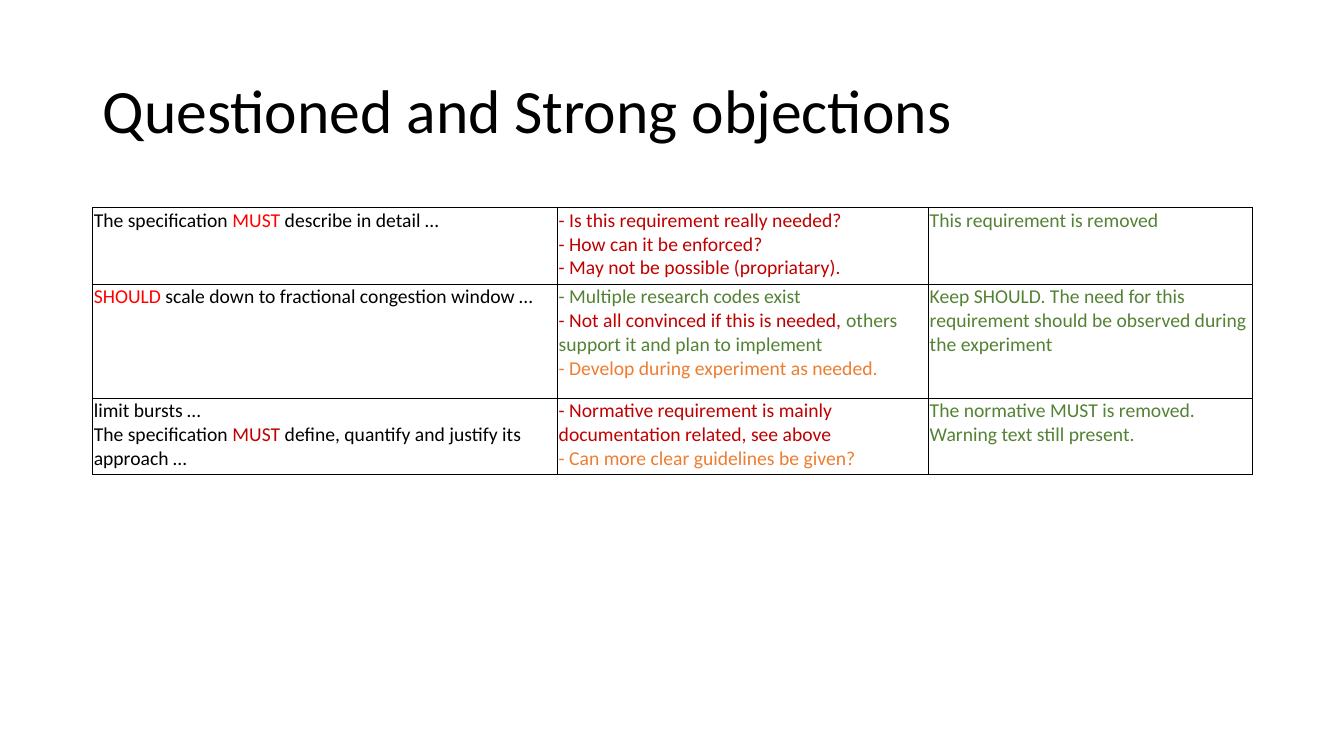
from dataclasses import dataclass

from lxml.etree import SubElement
from pptx import Presentation
from pptx.dml.color import RGBColor
from pptx.enum.text import MSO_ANCHOR
from pptx.oxml.ns import qn
from pptx.util import Inches, Pt


@dataclass(frozen=True)
class Theme:
    font: str = "Calibri"
    title_size: int = 44
    table_size: int = 14
    border_width: int = 1
    black: str = "000000"
    keyword: str = "FF0000"
    objection: str = "C00000"
    resolved: str = "548235"
    open_point: str = "ED7D31"


THEME = Theme()
SLIDE_WIDTH, SLIDE_HEIGHT = Inches(13.33), Inches(7.5)
LEFT, CONTENT_WIDTH = Inches(0.92), Inches(11.5)
TITLE_TOP, TITLE_HEIGHT = 0.4 / 7.5, 1.45 / 7.5
TABLE_TOP = 2.06 / 7.5
COLUMN_SHARES = (0.401, 0.32, 0.279)
ROW_HEIGHTS = (0.76, 1.13, 0.76)

# Each cell is a list of paragraphs; each paragraph is a list of (text, colour) runs.
REQUIREMENTS = [
    [
        [[("The specification ", THEME.black), ("MUST", THEME.keyword),
          (" describe in detail …", THEME.black)]],
        [[("- Is this requirement really needed?", THEME.objection)],
         [("- How can it be enforced?", THEME.objection)],
         [("- May not be possible (propriatary).", THEME.objection)]],
        [[("This requirement is removed", THEME.resolved)]],
    ],
    [
        [[("SHOULD", THEME.keyword),
          (" scale down to fractional congestion window …", THEME.black)]],
        [[("- Multiple research codes exist", THEME.resolved)],
         [("- Not all convinced if this is needed, ", THEME.objection),
          ("others support it and plan to implement", THEME.resolved)],
         [("- Develop during experiment as needed.", THEME.open_point)]],
        [[("Keep SHOULD. The need for this requirement should be observed "
           "during the experiment", THEME.resolved)]],
    ],
    [
        [[("limit bursts …", THEME.black)],
         [("The specification ", THEME.black), ("MUST", THEME.objection),
          (" define, quantify and justify its approach …", THEME.black)]],
        [[("- Normative requirement is mainly documentation related, see above",
           THEME.objection)],
         [("- Can more clear guidelines be given?", THEME.open_point)]],
        [[("The normative MUST is removed. Warning text still present.",
           THEME.resolved)]],
    ],
]


def add_run(paragraph, text, size, color):
    run = paragraph.add_run()
    run.text = text
    run.font.name = THEME.font
    run.font.size = Pt(size)
    run.font.color.rgb = RGBColor.from_string(color)


def add_title(slide, text):
    shape = slide.shapes.add_textbox(
        LEFT, int(SLIDE_HEIGHT * TITLE_TOP),
        CONTENT_WIDTH, int(SLIDE_HEIGHT * TITLE_HEIGHT))
    frame = shape.text_frame
    frame.word_wrap = True
    frame.vertical_anchor = MSO_ANCHOR.MIDDLE
    paragraph = frame.paragraphs[0]
    paragraph.line_spacing = 0.9
    add_run(paragraph, text, THEME.title_size, THEME.black)


def set_borders(cell):
    properties = cell._tc.get_or_add_tcPr()
    for position, side in enumerate(("a:lnL", "a:lnR", "a:lnT", "a:lnB")):
        line = SubElement(properties, qn(side), w=str(Pt(THEME.border_width)))
        fill = SubElement(line, qn("a:solidFill"))
        SubElement(fill, qn("a:srgbClr"), val=THEME.black)
        properties.insert(position, line)


def fill_cell(cell, paragraphs):
    cell.fill.background()
    set_borders(cell)
    cell.margin_left = cell.margin_right = cell.margin_top = Inches(0.01)
    cell.margin_bottom = 0
    frame = cell.text_frame
    for index, runs in enumerate(paragraphs):
        paragraph = frame.add_paragraph() if index else frame.paragraphs[0]
        for text, color in runs:
            add_run(paragraph, text, THEME.table_size, color)


def add_requirements_table(slide, rows):
    table = slide.shapes.add_table(
        len(rows), len(COLUMN_SHARES), LEFT, int(SLIDE_HEIGHT * TABLE_TOP),
        CONTENT_WIDTH, Inches(sum(ROW_HEIGHTS))).table
    table.first_row = table.horz_banding = False
    for column, share in zip(table.columns, COLUMN_SHARES):
        column.width = int(CONTENT_WIDTH * share)
    for table_row, height, cells in zip(table.rows, ROW_HEIGHTS, rows):
        table_row.height = Inches(height)
        for cell, paragraphs in zip(table_row.cells, cells):
            fill_cell(cell, paragraphs)


def main():
    presentation = Presentation()
    presentation.slide_width = SLIDE_WIDTH
    presentation.slide_height = SLIDE_HEIGHT
    slide = presentation.slides.add_slide(presentation.slide_layouts[6])
    add_title(slide, "Questioned and Strong objections")
    add_requirements_table(slide, REQUIREMENTS)
    presentation.save("out.pptx")


if __name__ == "__main__":
    main()
